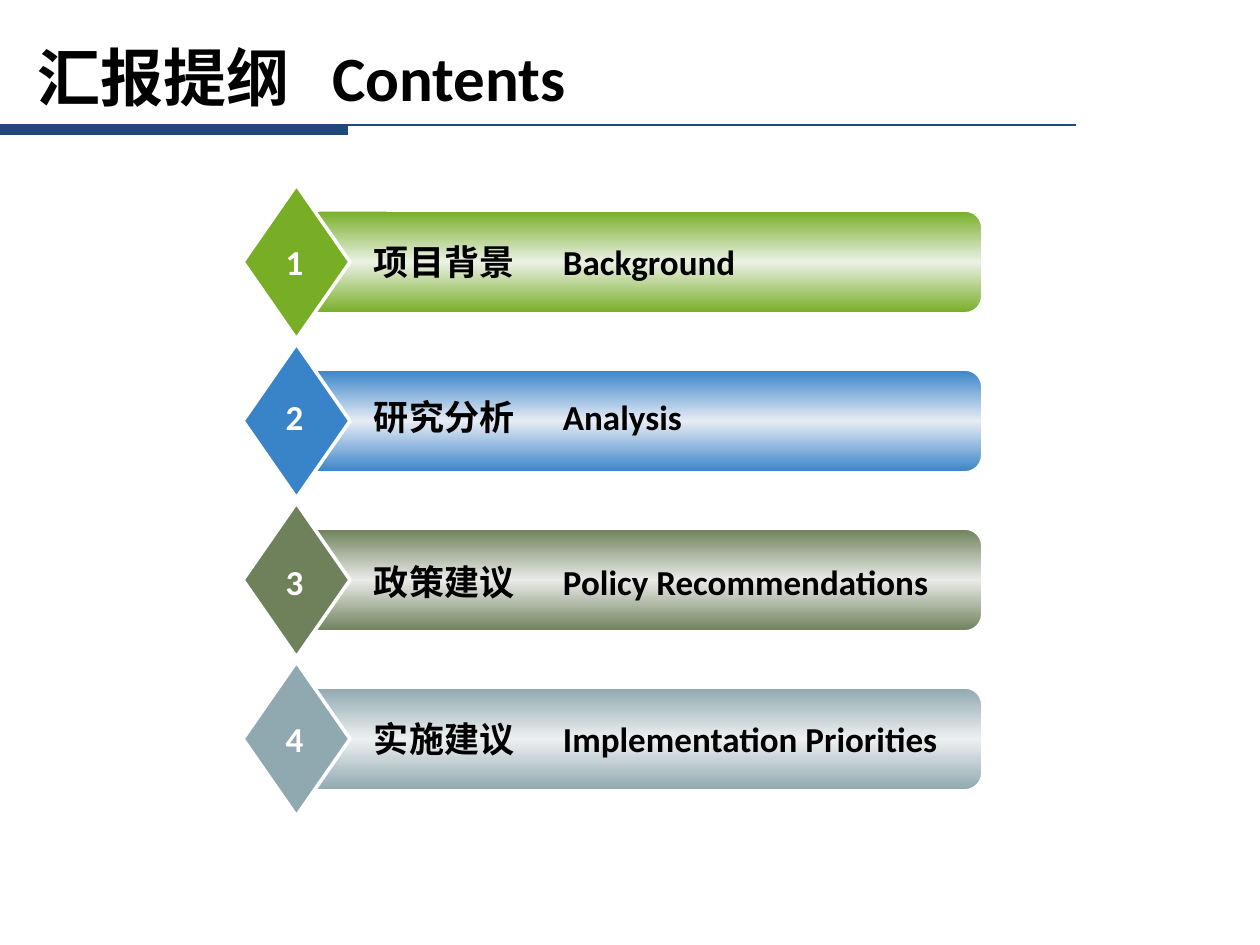
from copy import deepcopy

from pptx import Presentation
from pptx.dml.color import RGBColor
from pptx.enum.shapes import MSO_CONNECTOR, MSO_SHAPE
from pptx.enum.text import MSO_ANCHOR, PP_ALIGN
from pptx.oxml.ns import qn
from pptx.oxml.xmlchemy import OxmlElement
from pptx.util import Emu, Pt

PX = 914400 // 126
COLORS = {"navy": "1F497D", "white": "FFFFFF", "black": "000000"}
# number, Chinese heading, English heading, label top, edge colour, glow colour
SECTIONS = [
    ("1", "项目背景", "Background", 234, "77AE26", "EBF1E6"),
    ("2", "研究分析", "Analysis", 389, "3984C9", "E7ECF5"),
    ("3", "政策建议", "Policy Recommendations", 554, "6E815B", "EAEBE8"),
    ("4", "实施建议", "Implementation Priorities", 711, "90A8B0", "EDF0F1"),
]
FIRST_TOP, ROW_PITCH = 185, 159
LABEL_TAB, TITLE_TAB = 189, 295


def px(*lengths):
    return [Emu(length * PX) for length in lengths]


def rgb(hex_color):
    return RGBColor.from_string(hex_color)


def add_block(slide, preset, box, fill, outline_width=0):
    block = slide.shapes.add_shape(preset, *px(*box))
    block.shadow.inherit = False
    block.fill.solid()
    block.fill.fore_color.rgb = rgb(fill)
    if outline_width:
        block.line.color.rgb = rgb(COLORS["white"])
        block.line.width = Pt(outline_width)
    else:
        block.line.fill.background()
    return block


def add_glow(block, edge, glow):
    """Fill the block from edge colour to glow colour and back, vertically."""
    block.fill.gradient()
    block.fill.gradient_angle = 90
    stop_list = block.element.spPr.find(qn("a:gradFill")).find(qn("a:gsLst"))
    stop_list.insert(1, deepcopy(stop_list[0]))
    for stop, position, color in zip(
        block.fill.gradient_stops, (0, 0.5, 1), (edge, glow, edge)
    ):
        stop.position = position
        stop.color.rgb = rgb(color)


def add_tab(paragraph, position):
    tabs = OxmlElement("a:tabLst")
    tab = OxmlElement("a:tab")
    tab.set("pos", str(position * PX))
    tab.set("algn", "l")
    tabs.append(tab)
    paragraph._p.get_or_add_pPr().append(tabs)


def add_text(slide, box, words, size, color, tab=0, align=PP_ALIGN.LEFT, **frame_format):
    frame = slide.shapes.add_textbox(*px(*box)).text_frame
    for name, value in {"word_wrap": True, **frame_format}.items():
        setattr(frame, name, value)
    paragraph = frame.paragraphs[0]
    paragraph.alignment = align
    if tab:
        add_tab(paragraph, tab)
    run = paragraph.add_run()
    run.text = words
    for name, value in {"name": "Calibri", "size": Pt(size), "bold": True}.items():
        setattr(run.font, name, value)
    run.font.color.rgb = rgb(COLORS[color])


def add_header(slide):
    rule = slide.shapes.add_connector(MSO_CONNECTOR.STRAIGHT, *px(0, 125, 1076, 125))
    rule.line.color.rgb = rgb(COLORS["navy"])
    rule.line.width = Pt(1.5)
    rule.element.spPr.append(OxmlElement("a:effectLst"))
    add_block(slide, MSO_SHAPE.RECTANGLE, (0, 125, 348, 10), COLORS["navy"])


def add_section(slide, top, section):
    number, chinese, english, label_top, edge, glow = section
    bar_box = (302, top + 26, 680, 102)
    bar = add_block(slide, MSO_SHAPE.ROUNDED_RECTANGLE, bar_box, edge, 1)
    add_glow(bar, edge, glow)
    add_block(slide, MSO_SHAPE.DIAMOND, (243, top, 107, 154), edge, 2)
    add_text(slide, (339, label_top, 645, 55), f"{chinese}\t{english}", 20, "black",
             tab=LABEL_TAB, margin_left=Emu(35 * PX))
    add_text(slide, (273, label_top, 43, 55), number, 20, "white",
             align=PP_ALIGN.CENTER, word_wrap=False)


def main():
    presentation = Presentation()
    presentation.slide_width, presentation.slide_height = px(1260, 945)
    slide = presentation.slides.add_slide(presentation.slide_layouts[6])
    add_header(slide)
    for row, section in enumerate(SECTIONS):
        add_section(slide, FIRST_TOP + row * ROW_PITCH, section)
    add_text(slide, (25, 37, 1061, 78), "汇报提纲\tContents", 36, "black",
             tab=TITLE_TAB, vertical_anchor=MSO_ANCHOR.MIDDLE)
    presentation.save("out.pptx")


if __name__ == "__main__":
    main()
